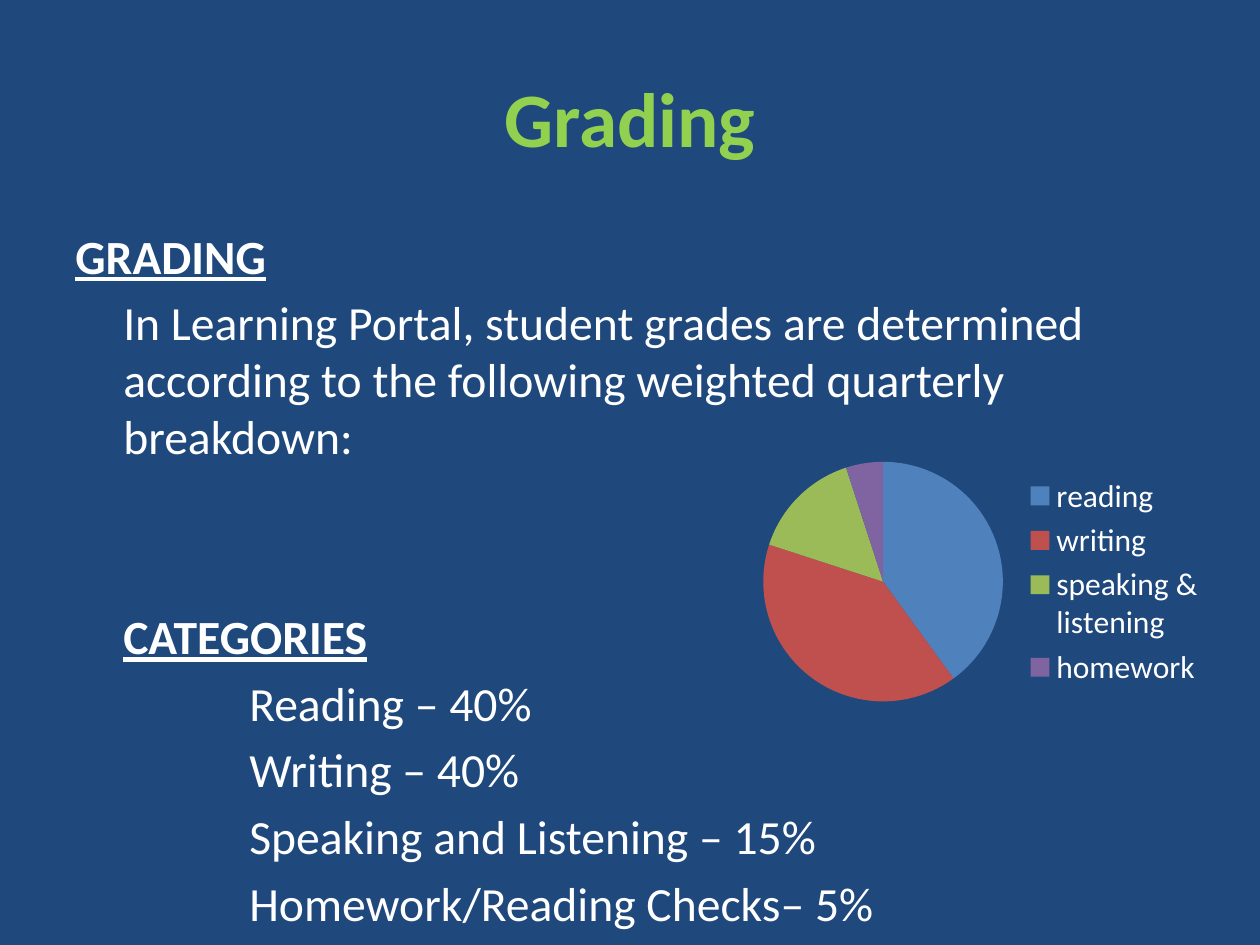
from pptx import Presentation
from pptx.chart.data import CategoryChartData as ChartData
from pptx.dml.color import RGBColor as RGB
from pptx.enum.chart import XL_CHART_TYPE as Kind, XL_LEGEND_POSITION as Side
from pptx.enum.text import MSO_ANCHOR as Anchor, MSO_AUTO_SIZE as Fit, PP_ALIGN as Align
from pptx.util import Inches, Pt

HUES = {"back": "1F497D", "title": "92D050", "text": "FFFFFF", "reading": "4F81BD",
        "writing": "C0504D", "speaking & listening": "9BBB59", "homework": "8064A2"}
SHARES = [("reading", 40), ("writing", 40), ("speaking & listening", 15), ("homework", 5)]

# text, indent in inches, points of space above, heading or not
LINES = [
    ("GRADING", 0, 0, True),
    ("In Learning Portal, student grades are determined according to "
     "the following weighted quarterly breakdown:", 0.38, 5.5, False),
    ("CATEGORIES", 0.38, 81.5, True),
    ("Reading – 40%", 1.38, 5.5, False),
    ("Writing – 40%", 1.38, 5.5, False),
    ("Speaking and Listening – 15%", 1.38, 5.5, False),
    ("Homework/Reading Checks– 5%", 1.38, 5.5, False),
]


def style(font, hue, **form):
    form = {"name": "Calibri", **form}
    for key, val in form.items():
        setattr(font, key, val)
    font.color.rgb = RGB.from_string(HUES[hue])


def area(left, top, wide, high):
    """Turn shares of the slide's size into lengths."""
    return int(left * W), int(top * H), int(wide * W), int(high * H)


deck = Presentation()
W, H = deck.slide_width, deck.slide_height = Inches(10), Inches(7.5)
slide = deck.slides.add_slide(deck.slide_layouts[5])
slide.background.fill.solid()
slide.background.fill.fore_color.rgb = RGB.from_string(HUES["back"])

# Title
title = slide.shapes.title
title.left, title.top, title.width, title.height = area(0.05, 0.04, 0.9, 1 / 6)
title.text_frame.text = "Grading"
title.text_frame.vertical_anchor = Anchor.MIDDLE
head = title.text_frame.paragraphs[0]
head.alignment = Align.CENTER
style(head.runs[0].font, "title", size=Pt(44), bold=True)

# Body
frame = slide.shapes.add_textbox(*area(0.05, 0.2333, 0.925, 0.66)).text_frame
frame.word_wrap = True
frame.auto_size = Fit.NONE
for i, (text, indent, gap, bold) in enumerate(LINES):
    para = frame.add_paragraph() if i else frame.paragraphs[0]
    para.space_before = Pt(gap)
    para.line_spacing = Pt(32.6)
    para._p.get_or_add_pPr().set("marL", str(Inches(indent)))
    run = para.add_run()
    run.text = text
    style(run.font, "text", size=Pt(27.2), bold=bold, underline=bold)

# Pie chart
data = ChartData()
data.categories = [name for name, _ in SHARES]
data.add_series("Series 1", [val for _, val in SHARES])
chart = slide.shapes.add_chart(Kind.PIE, *area(0.592, 0.277, 0.375, 0.677), data).chart
chart.has_title = False
style(chart.font, "text", size=Pt(18))
chart.has_legend = True
chart.legend.position = Side.RIGHT
chart.legend.include_in_layout = False
plot = chart.plots[0]
plot.vary_by_categories = True
for i, (name, _) in enumerate(SHARES):
    fill = plot.series[0].points[i].format.fill
    fill.solid()
    fill.fore_color.rgb = RGB.from_string(HUES[name])

deck.save("out.pptx")
